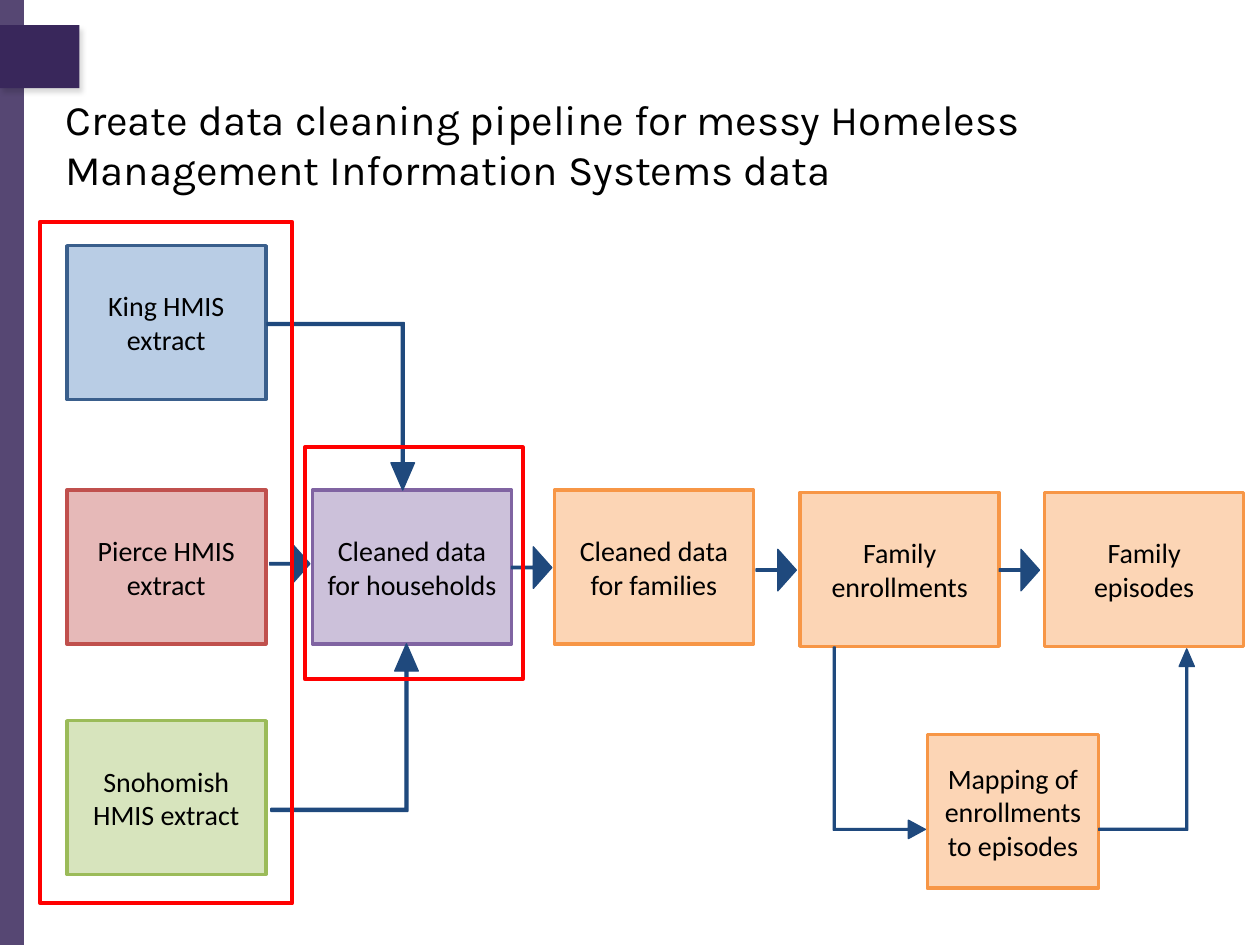
from lxml.etree import SubElement
from pptx import Presentation
from pptx.dml.color import RGBColor
from pptx.enum.shapes import MSO_SHAPE
from pptx.enum.text import MSO_ANCHOR, PP_ALIGN
from pptx.oxml.ns import qn
from pptx.util import Inches, Pt

PURPLE = RGBColor(0x39, 0x27, 0x5B)
BLACK = RGBColor(0x00, 0x00, 0x00)
NAVY = RGBColor(0x1F, 0x49, 0x7D)
RED = RGBColor(0xFF, 0x00, 0x00)
BLUE_FILL, BLUE_LINE = RGBColor(0xB9, 0xCD, 0xE5), RGBColor(0x3A, 0x5F, 0x8C)
ROSE_FILL, ROSE_LINE = RGBColor(0xE6, 0xB9, 0xB8), RGBColor(0xC0, 0x50, 0x4D)
GREEN_FILL, GREEN_LINE = RGBColor(0xD7, 0xE4, 0xBD), RGBColor(0x9B, 0xBB, 0x59)
LILAC_FILL, LILAC_LINE = RGBColor(0xCC, 0xC1, 0xDA), RGBColor(0x80, 0x64, 0xA2)
ORANGE_FILL, ORANGE_LINE = RGBColor(0xFC, 0xD5, 0xB5), RGBColor(0xF7, 0x96, 0x46)

TITLE = "Create data cleaning pipeline for messy Homeless Management Information Systems data"
STEP_W, STEP_H = 1.58, 1.22
STEPS = [
    ("King HMIS extract", 0.53, 1.95, STEP_W, BLUE_FILL, BLUE_LINE),
    ("Pierce HMIS extract", 0.53, 3.89, STEP_W, ROSE_FILL, ROSE_LINE),
    ("Snohomish HMIS extract", 0.53, 5.72, STEP_W, GREEN_FILL, GREEN_LINE),
    ("Cleaned data for households", 2.48, 3.89, STEP_W, LILAC_FILL, LILAC_LINE),
    ("Cleaned data for families", 4.4, 3.89, STEP_W, ORANGE_FILL, ORANGE_LINE),
    ("Family enrollments", 6.35, 3.91, STEP_W, ORANGE_FILL, ORANGE_LINE),
    ("Mapping of enrollments to episodes", 7.36, 5.83, 1.36, ORANGE_FILL, ORANGE_LINE),
    ("Family episodes", 8.29, 3.91, STEP_W, ORANGE_FILL, ORANGE_LINE),
]
STRAIGHT_ARROWS = [(2.14, 4.31), (4.06, 4.34), (6, 4.36), (7.93, 4.36)]
BENT_ARROWS = [
    ((2.12, 2.56, 1.17, 1.33), 0.08, 0, ("flipV",)),
    ((2.15, 5.11, 1.17, 1.33), 0.08, 0, ()),
    ((8.72, 5.15, 0.76, 1.44), 0.08, 0, ()),
    ((6.22, 5.53, 1.52, 0.73), 0.1, 270, ("flipH", "flipV")),
]
HIGHLIGHTS = [(0.32, 1.76, 2, 5.41), (2.42, 3.55, 1.73, 1.84)]


def add_block(slide, box, fill=None, line=None, line_width=2, preset=MSO_SHAPE.RECTANGLE):
    block = slide.shapes.add_shape(preset, *map(Inches, box))
    block.shadow.inherit = False
    if fill is None:
        block.fill.background()
    else:
        block.fill.solid()
        block.fill.fore_color.rgb = fill
    if line is None:
        block.line.fill.background()
    else:
        block.line.color.rgb = line
        block.line.width = Pt(line_width)
    return block


def write_text(holder, text, size=16, font="Calibri", color=BLACK, align=PP_ALIGN.CENTER):
    frame = holder.text_frame
    frame.word_wrap = True
    frame.vertical_anchor = MSO_ANCHOR.MIDDLE
    paragraph = frame.paragraphs[0]
    paragraph.alignment = align
    run = paragraph.add_run()
    run.text = text
    run.font.size = Pt(size)
    run.font.name = font
    run.font.color.rgb = color


def add_arrow(slide, box, preset, adjustments, rotation=0, flips=()):
    arrow = add_block(slide, box, NAVY, NAVY, 0.75, preset)
    for index, value in enumerate(adjustments):
        arrow.adjustments[index] = value
    arrow.rotation = rotation
    for flip in flips:
        arrow.element.spPr.find(qn("a:xfrm")).set(flip, "1")


def add_side_band(slide):
    band = add_block(slide, (0, 0, 0.19, 7.5), PURPLE)
    band_color = band.element.spPr.find(qn("a:solidFill"))[0]
    SubElement(band_color, qn("a:alpha"), val="85000")

    tab = add_block(slide, (0, 0.2, 0.63, 0.5), PURPLE)
    shadow = SubElement(
        tab.element.spPr.find(qn("a:effectLst")), qn("a:outerShdw"),
        blurRad=str(Pt(3)), dist=str(Pt(3)), dir="3600000", rotWithShape="0",
    )
    shadow_color = SubElement(shadow, qn("a:srgbClr"), val="000000")
    SubElement(shadow_color, qn("a:alpha"), val="15000")


def main():
    prs = Presentation()
    prs.slide_width, prs.slide_height = Inches(10), Inches(7.5)
    slide = prs.slides.add_slide(prs.slide_layouts[6])

    add_side_band(slide)
    for text, left, top, width, fill, line in STEPS:
        step = add_block(slide, (left, top, width, STEP_H), fill, line)
        write_text(step, text)
    for box, half_head, rotation, flips in BENT_ARROWS:
        add_arrow(slide, box, MSO_SHAPE.BENT_UP_ARROW, (0.02, half_head, 0.185), rotation, flips)
    for left, top in STRAIGHT_ARROWS:
        add_arrow(slide, (left, top, 0.32, 0.33), MSO_SHAPE.RIGHT_ARROW, (0.06, 0.46))

    title = slide.shapes.add_textbox(*map(Inches, (0.42, 0.64, 9, 1)))
    write_text(title, TITLE, size=24, font="Karla", align=PP_ALIGN.LEFT)
    for box in HIGHLIGHTS:
        add_block(slide, box, line=RED, line_width=2.25)

    prs.save("out.pptx")


if __name__ == "__main__":
    main()
